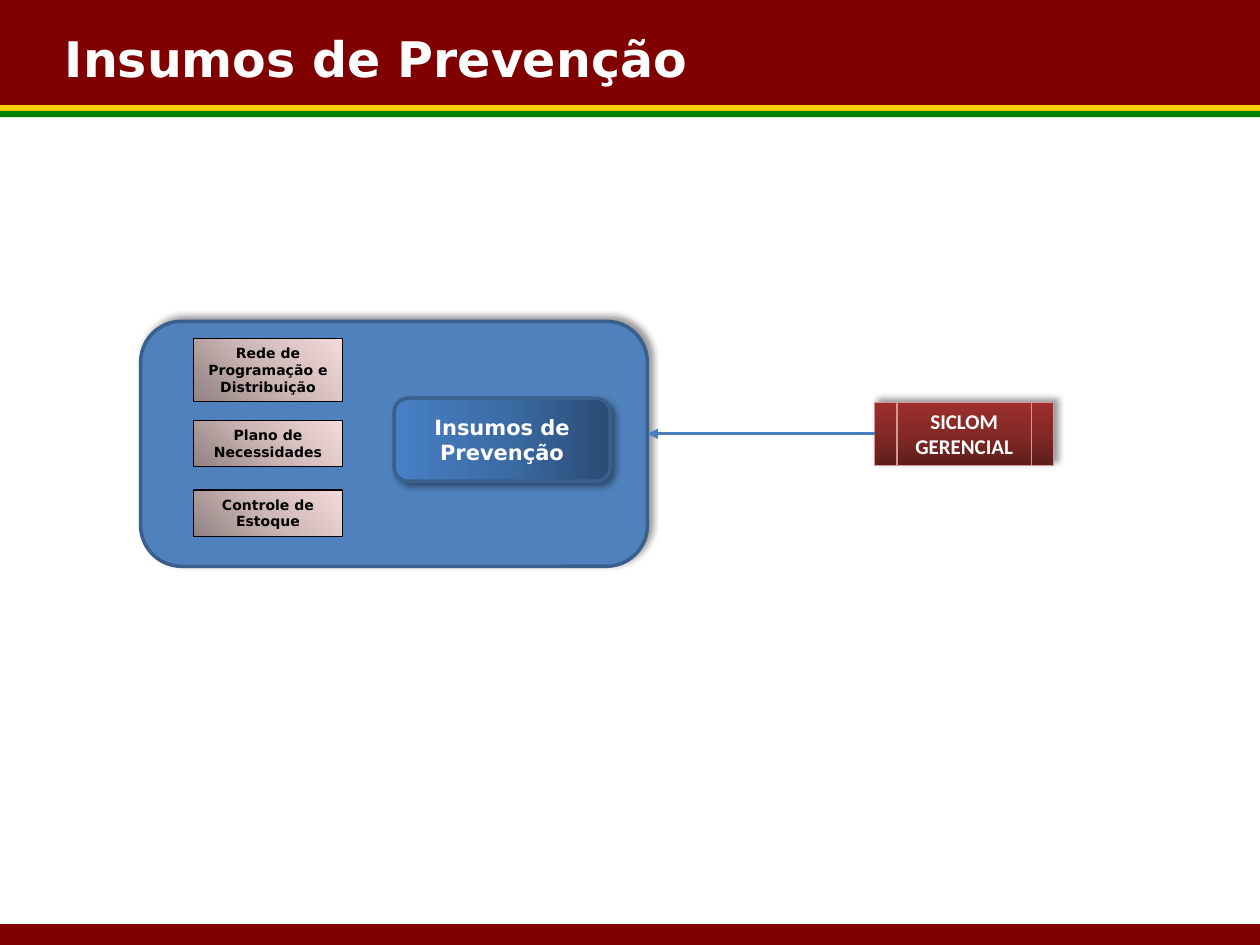
import pptx
import pptx.util
import pptx.dml.color
import pptx.enum.shapes
import pptx.enum.text
import pptx.oxml
import pptx.oxml.ns
import lxml.etree

Pt = pptx.util.Pt
qn = pptx.oxml.ns.qn
MSO = pptx.enum.shapes.MSO_SHAPE
ALIGN = pptx.enum.text.PP_ALIGN
ANCHOR = pptx.enum.text.MSO_ANCHOR

COLORS = {
    "maroon": "800000", "yellow": "FFD200", "green": "008000",
    "panel": "4F81BD", "panel_line": "3A5F8C", "arrow": "4B7EBC",
    "system_line": "D99694", "white": "FFFFFF", "black": "000000",
}
GRADIENTS = {
    "blue": (["2A4C75", "3C6CA6", "4780C5"], 180),
    "pink": (["918181", "CEB8B7", "F4DADA"], 315),
    "red": (["5D1D1B", "842926", "9C302E"], 270),
}
WIDTH, HEIGHT = 720, 540
TITLE = "Insumos de Prevenção"
BANDS = [
    ("yellow", 60, 3.6), ("maroon", 0, 60),
    ("green", 63.4, 3.6), ("maroon", 528, 12),
]
PANEL = (80.4, 183.6, 289.6, 140)
MODULE = (225.2, 227.6, 123.4, 47.4)
SYSTEM = (499.8, 230, 102.4, 35.8)
BOX_LEFT, BOX_WIDTH = 110.6, 85.2
BOXES = [
    ("Controle de Estoque", 280, 26.6),
    ("Plano de Necessidades", 240.2, 26.6),
    ("Rede de Programação e Distribuição", 193.4, 36),
]


def rgb(name):
    return pptx.dml.color.RGBColor.from_string(COLORS[name])


def paint(sp, name):
    if name not in GRADIENTS:
        sp.fill.solid()
        sp.fill.fore_color.rgb = rgb(name)
        return
    stops, angle = GRADIENTS[name]
    sp.fill.gradient()
    sp.fill.gradient_angle = 360 - angle
    stop_list = sp._element.spPr.find(".//" + qn("a:gsLst"))
    for old in list(stop_list):
        stop_list.remove(old)
    for i, color in enumerate(stops):
        stop = lxml.etree.SubElement(stop_list, qn("a:gs"), pos=str(i * 50000))
        lxml.etree.SubElement(stop, qn("a:srgbClr"), val=color)


def add_shadow(sp, angle):
    effects = sp._element.spPr.find(qn("a:effectLst"))
    shadow = lxml.etree.SubElement(
        effects, qn("a:outerShdw"), blurRad=str(Pt(4)), dist=str(Pt(3)),
        dir=str(angle * 60000), algn="ctr", rotWithShape="0")
    color = lxml.etree.SubElement(shadow, qn("a:srgbClr"), val=COLORS["black"])
    lxml.etree.SubElement(color, qn("a:alpha"), val="40000")


def add_shape(s, kind, frame, fill, line=None, width=0.75, shadow=None):
    sp = s.shapes.add_shape(kind, *map(Pt, frame))
    sp.shadow.inherit = False
    paint(sp, fill)
    if line:
        sp.line.color.rgb = rgb(line)
        sp.line.width = Pt(width)
    else:
        sp.line.fill.background()
    if shadow is not None:
        add_shadow(sp, shadow)
    return sp


def write(sp, text, size, color="white", font="DejaVu Sans",
          align=ALIGN.CENTER, anchor=ANCHOR.MIDDLE):
    tf = sp.text_frame
    tf.word_wrap = True
    tf.vertical_anchor = anchor
    tf.text = text
    p = tf.paragraphs[0]
    p.alignment = align
    r = p.runs[0]
    r.font.name = font
    r.font.size = Pt(size)
    r.font.bold = True
    r.font.color.rgb = rgb(color)


def add_arrow(s, source, end_x):
    y = source.top + source.height // 2
    line = s.shapes.add_connector(
        pptx.enum.shapes.MSO_CONNECTOR.STRAIGHT, source.left, y, end_x, y)
    line.begin_connect(source, 1)
    line.line.color.rgb = rgb("arrow")
    line.line.width = Pt(1.5)
    lxml.etree.SubElement(line.line._get_or_add_ln(), qn("a:tailEnd"), type="triangle")
    lxml.etree.SubElement(line._element.spPr, qn("a:effectLst"))


def main():
    prs = pptx.Presentation()
    prs.slide_width, prs.slide_height = Pt(WIDTH), Pt(HEIGHT)
    s = prs.slides.add_slide(prs.slide_layouts[6])

    for color, top, height in BANDS:
        add_shape(s, MSO.RECTANGLE, (0, top, WIDTH, height), color)

    panel = add_shape(s, MSO.ROUNDED_RECTANGLE, PANEL, "panel", "panel_line", 2, 315)

    title = s.shapes.add_textbox(Pt(30), Pt(13), Pt(600), Pt(41))
    write(title, TITLE, 28, align=ALIGN.LEFT, anchor=ANCHOR.TOP)

    module = add_shape(s, MSO.ROUNDED_RECTANGLE, MODULE, "blue", "panel_line", 2, 45)
    write(module, TITLE, 12)

    for text, top, height in BOXES:
        box = add_shape(s, MSO.RECTANGLE, (BOX_LEFT, top, BOX_WIDTH, height), "pink", "black")
        write(box, text, 8, "black", anchor=ANCHOR.TOP)

    system = add_shape(s, MSO.FLOWCHART_PREDEFINED_PROCESS, SYSTEM, "red", "system_line", shadow=315)
    write(system, "SICLOM GERENCIAL", 12, font="Calibri")
    add_arrow(s, system, panel.left + panel.width)

    prs.save("out.pptx")


if __name__ == "__main__":
    main()
